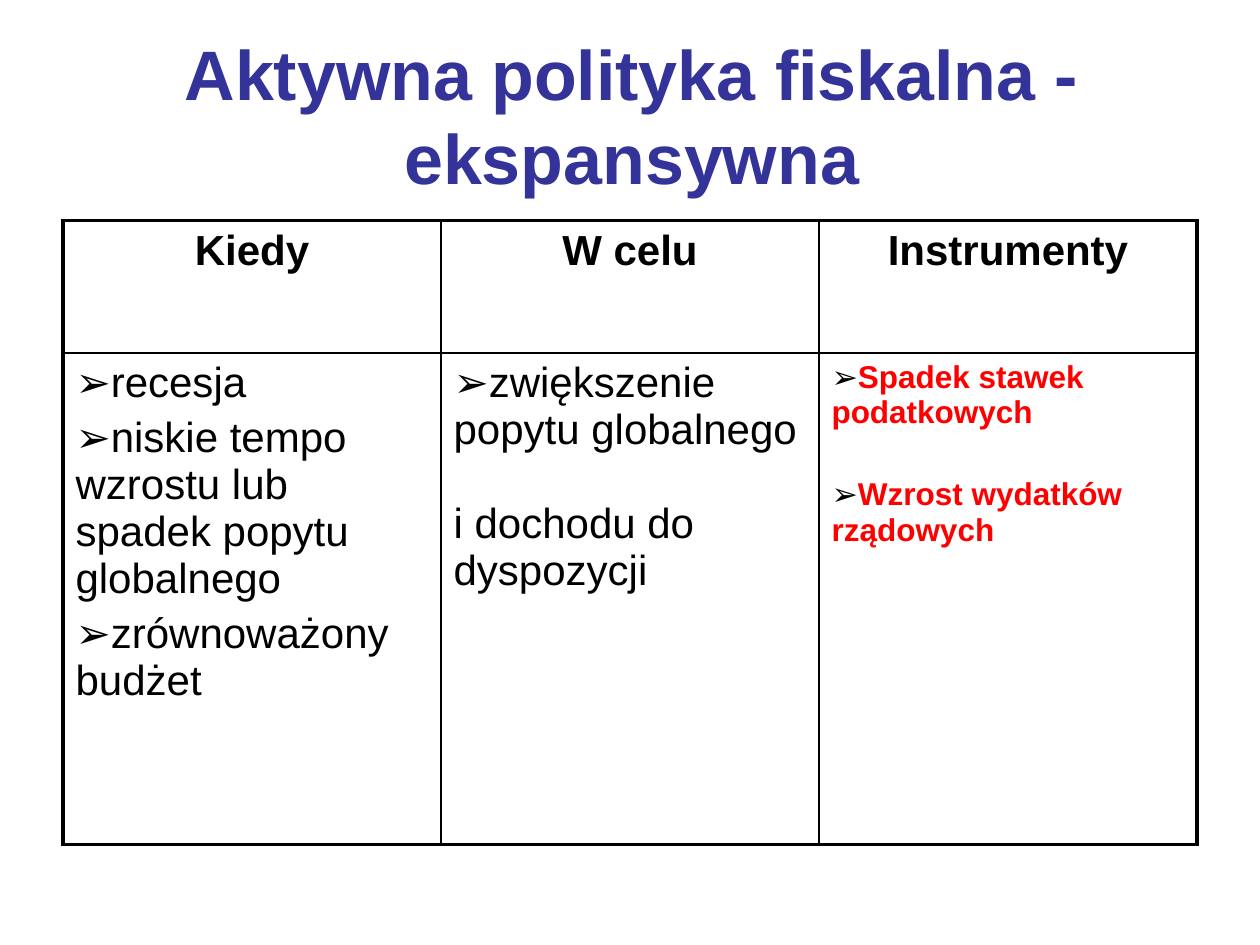
from lxml import etree
from pptx import Presentation
from pptx import util as u
from pptx.dml.color import RGBColor
from pptx.enum import text
from pptx.oxml.ns import qn

COLORS = {"title": "333399", "text": "000000", "accent": "FF0000"}
FONT = "Arial"
THICK, THIN = 2.25, 1
NEAR, FAR = 4.8, 27

TITLE = "Aktywna polityka fiskalna - ekspansywna"
HEADERS = ["Kiedy", "W celu", "Instrumenty"]
# Each entry: text, bulleted, space before in points
BODY = [
    [("recesja", True, 0),
     ("niskie tempo wzrostu lub spadek popytu globalnego", True, NEAR),
     ("zrównoważony budżet", True, NEAR)],
    [("zwiększenie popytu globalnego", True, 0),
     ("i dochodu do dyspozycji", False, FAR)],
    [("Spadek stawek podatkowych", True, 0),
     ("Wzrost wydatków rządowych", True, FAR)],
]
BODY_STYLES = [(24, "text", False), (24, "text", False), (18, "accent", True)]
COL_WIDTH = u.Cm(7.62)
ROW_HEIGHTS = [u.Cm(2.67), u.Cm(9.9)]


def style(p, size, color, bold):
    for r in p.runs:
        r.font.name = FONT
        r.font.size = u.Pt(size)
        r.font.bold = bold
        r.font.color.rgb = RGBColor.from_string(COLORS[color])


def add_bullet(p):
    pPr = p._p.get_or_add_pPr()
    pPr.set("marL", "0")
    pPr.set("indent", "0")
    clr = etree.SubElement(pPr, qn("a:buClr"))
    etree.SubElement(clr, qn("a:srgbClr"), val=COLORS["text"])
    etree.SubElement(pPr, qn("a:buFont"), typeface=FONT)
    etree.SubElement(pPr, qn("a:buChar"), char="➢")


def set_borders(cell, row, col):
    outer = {"L": col == 0, "R": col == len(HEADERS) - 1,
             "T": row == 0, "B": row == len(ROW_HEIGHTS) - 1}
    tcPr = cell._tc.get_or_add_tcPr()
    for i, (side, is_outer) in enumerate(outer.items()):
        width = u.Pt(THICK if is_outer else THIN)
        ln = etree.Element(qn(f"a:ln{side}"), w=str(int(width)))
        fill = etree.SubElement(ln, qn("a:solidFill"))
        etree.SubElement(fill, qn("a:srgbClr"), val=COLORS["text"])
        tcPr.insert(i, ln)


def main():
    prs = Presentation()
    prs.slide_width, prs.slide_height = u.Cm(25.4), u.Cm(19.05)
    s = prs.slides.add_slide(prs.slide_layouts[5])

    title = s.shapes.title
    title.left, title.top = u.Cm(1.3), u.Cm(0.71)
    title.width, title.height = u.Cm(22.86), u.Cm(3.18)
    tf = title.text_frame
    tf.text = TITLE
    tf.word_wrap = True
    tf.auto_size = text.MSO_AUTO_SIZE.NONE
    tf.vertical_anchor = text.MSO_ANCHOR.MIDDLE
    tf.paragraphs[0].alignment = text.PP_ALIGN.CENTER
    style(tf.paragraphs[0], 40, "title", True)

    table = s.shapes.add_table(
        len(ROW_HEIGHTS), len(HEADERS), u.Cm(1.27), u.Cm(4.45),
        COL_WIDTH * len(HEADERS), sum(ROW_HEIGHTS)).table
    table.first_row = table.horz_banding = False
    for row, height in zip(table.rows, ROW_HEIGHTS):
        row.height = height

    for c, (header, items) in enumerate(zip(HEADERS, BODY)):
        table.columns[c].width = COL_WIDTH
        for r in range(len(ROW_HEIGHTS)):
            cell = table.cell(r, c)
            cell.fill.background()
            set_borders(cell, r, c)

        p = table.cell(0, c).text_frame.paragraphs[0]
        p.text = header
        p.alignment = text.PP_ALIGN.CENTER
        style(p, 24, "text", True)

        tf = table.cell(1, c).text_frame
        for i, (words, bulleted, gap) in enumerate(items):
            p = tf.add_paragraph() if i else tf.paragraphs[0]
            p.text = words
            if bulleted:
                add_bullet(p)
            p.space_before = u.Pt(gap)
            style(p, *BODY_STYLES[c])

    prs.save("out.pptx")


if __name__ == "__main__":
    main()
